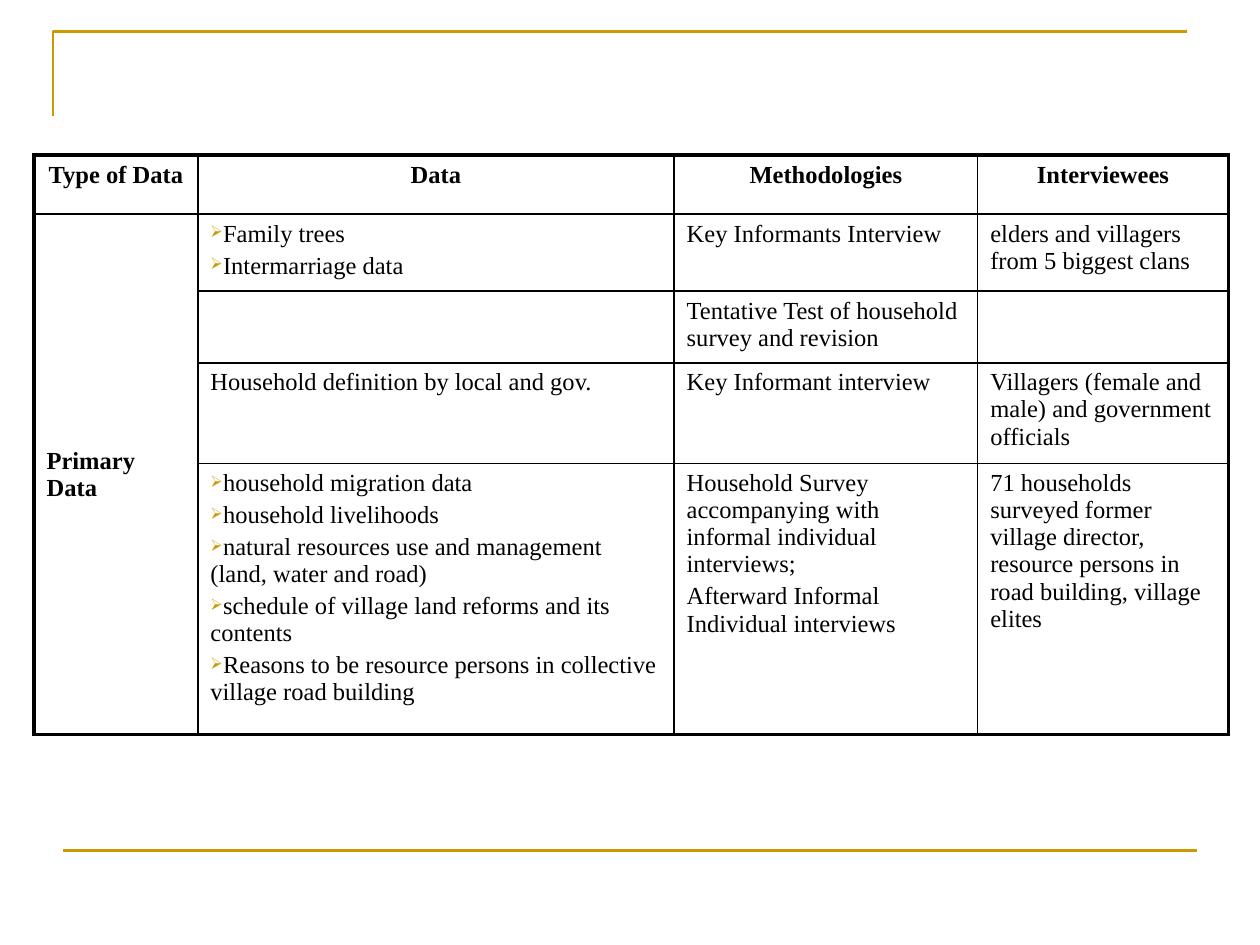
from lxml import etree
from pptx import Presentation
from pptx import util as u
from pptx.dml.color import RGBColor
from pptx.enum import shapes, text
from pptx.oxml.ns import qn

COLORS = {"gold": "CC9900", "ink": "000000"}
FONT = "Times New Roman"
BULLET = "➢"
NO_STYLE = "{2D5ABB26-0587-4C30-8999-92F81FD0307C}"
THIN, THICK = 1, 2.25

COLUMNS = [1.3, 3.78, 2.41, 1.99]
ROWS = [0.47, 0.61, 0.57, 0.8, 2.15]
HEADINGS = ["Type of Data", "Data", "Methodologies", "Interviewees"]
# Each cell is a list of paragraphs; the first column is one merged cell.
BODY = [
    [["Primary Data"],
     [BULLET + "Family trees", BULLET + "Intermarriage data"],
     ["Key Informants Interview"],
     ["elders and villagers from 5 biggest clans"]],
    [[], [], ["Tentative Test of household survey and revision"], []],
    [[],
     ["Household definition by local and gov."],
     ["Key Informant interview"],
     ["Villagers (female and male) and government officials"]],
    [[],
     [BULLET + "household migration data",
      BULLET + "household livelihoods",
      BULLET + "natural resources use and management (land, water and road)",
      BULLET + "schedule of village land reforms and its contents",
      BULLET + "Reasons to be resource persons in collective village road building"],
     ["Household Survey accompanying with informal individual interviews;",
      "Afterward Informal Individual interviews"],
     ["71 households surveyed former village director, resource persons in "
      "road building, village elites"]],
]


def color(name):
    return RGBColor.from_string(COLORS[name])


def style_rule(shape):
    shape.line.color.rgb = color("gold")
    shape.line.width = u.Pt(1.5)


def add_corner(page, left, top, right, bottom):
    """Draw the open frame corner at the top left of the page."""
    points = [(u.Inches(x), u.Inches(y))
              for x, y in ((left, bottom), (left, top), (right, top))]
    builder = page.shapes.build_freeform(*points[0])
    builder.add_line_segments(points[1:], close=False)
    corner = builder.convert_to_shape()
    corner.shadow.inherit = False
    corner.fill.background()
    style_rule(corner)


def add_rule(page, left, right, top):
    rule = page.shapes.add_connector(
        shapes.MSO_CONNECTOR.STRAIGHT,
        u.Inches(left), u.Inches(top), u.Inches(right), u.Inches(top))
    style_rule(rule)
    etree.SubElement(rule._element.spPr, qn("a:effectLst"))


def add_bullet(para):
    properties = para._p.get_or_add_pPr()
    properties.set("marL", "0")
    properties.set("indent", "0")
    tint = etree.SubElement(properties, qn("a:buClr"))
    etree.SubElement(tint, qn("a:srgbClr"), val=COLORS["gold"])
    etree.SubElement(properties, qn("a:buSzPct"), val="65000")
    etree.SubElement(properties, qn("a:buChar"), char=BULLET)


def set_borders(cell, widths):
    """Set border widths in points, given as left, right, top, bottom."""
    properties = cell._tc.get_or_add_tcPr()
    for index, (side, width) in enumerate(zip("LRTB", widths)):
        border = etree.Element(qn("a:ln" + side), w=str(u.Pt(width)))
        fill = etree.SubElement(border, qn("a:solidFill"))
        etree.SubElement(fill, qn("a:srgbClr"), val=COLORS["ink"])
        properties.insert(index, border)


def fill_cell(cell, lines, bold=False, align=None):
    frame = cell.text_frame
    for index, line in enumerate(lines or [""]):
        para = frame.add_paragraph() if index else frame.paragraphs[0]
        if line.startswith(BULLET):
            add_bullet(para)
        para.text = line.removeprefix(BULLET)
        para.alignment = align
        para.space_before = u.Pt(2.8)
        para.font.name = FONT
        para.font.size = u.Pt(14)
        para.font.bold = bold
        para.font.color.rgb = color("ink")


def add_data_table(page, left, top):
    table = page.shapes.add_table(
        len(ROWS), len(COLUMNS), u.Inches(left), u.Inches(top),
        u.Inches(sum(COLUMNS)), u.Inches(sum(ROWS))).table
    table.first_row = table.horz_banding = False
    table._tbl.tblPr.find(qn("a:tableStyleId")).text = NO_STYLE
    for column, width in zip(table.columns, COLUMNS):
        column.width = u.Inches(width)
    for row, height in zip(table.rows, ROWS):
        row.height = u.Inches(height)
    last_row, last_column = len(ROWS) - 1, len(COLUMNS) - 1
    table.cell(1, 0).merge(table.cell(last_row, 0))
    table.cell(1, 0).vertical_anchor = text.MSO_ANCHOR.MIDDLE

    content = [[[heading] for heading in HEADINGS]] + BODY
    for r, row in enumerate(content):
        for c, lines in enumerate(row):
            cell = table.cell(r, c)
            if cell.is_spanned:
                continue
            cell.fill.background()
            end_row = r + cell.span_height - 1 if cell.is_merge_origin else r
            edges = (c == 0, c == last_column, r == 0, end_row == last_row)
            set_borders(cell, [THICK if edge else THIN for edge in edges])
            fill_cell(cell, lines, bold=r == 0 or c == 0,
                      align=text.PP_ALIGN.CENTER if r == 0 else None)


def main():
    deck = Presentation()
    deck.slide_width, deck.slide_height = u.Inches(10), u.Inches(7.5)
    page = deck.slides.add_slide(deck.slide_layouts[6])
    add_corner(page, left=0.42, top=0.25, right=9.42, bottom=0.92)
    add_rule(page, left=0.5, right=9.5, top=6.75)
    add_data_table(page, left=0.27, top=1.23)
    deck.save("out.pptx")


if __name__ == "__main__":
    main()
